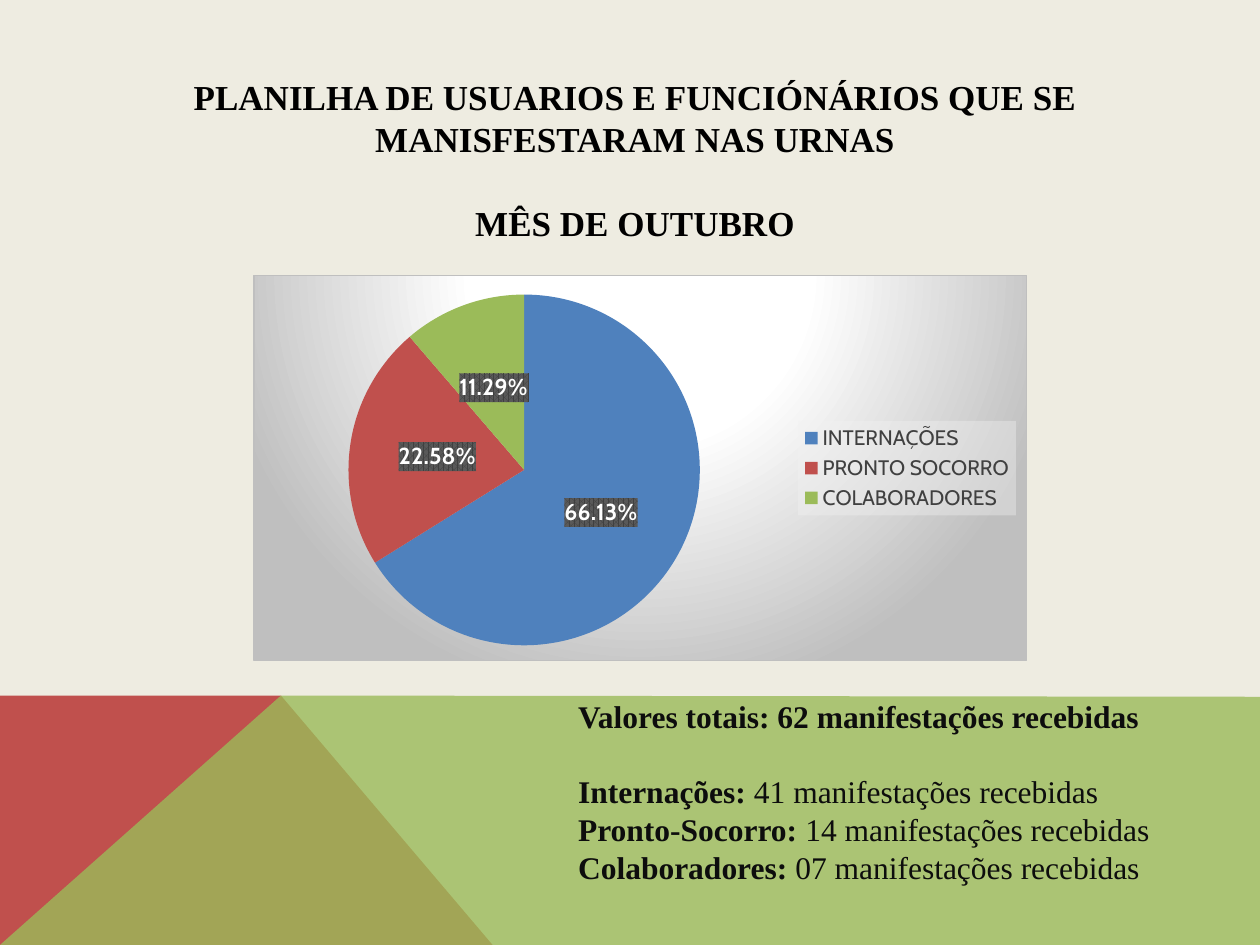
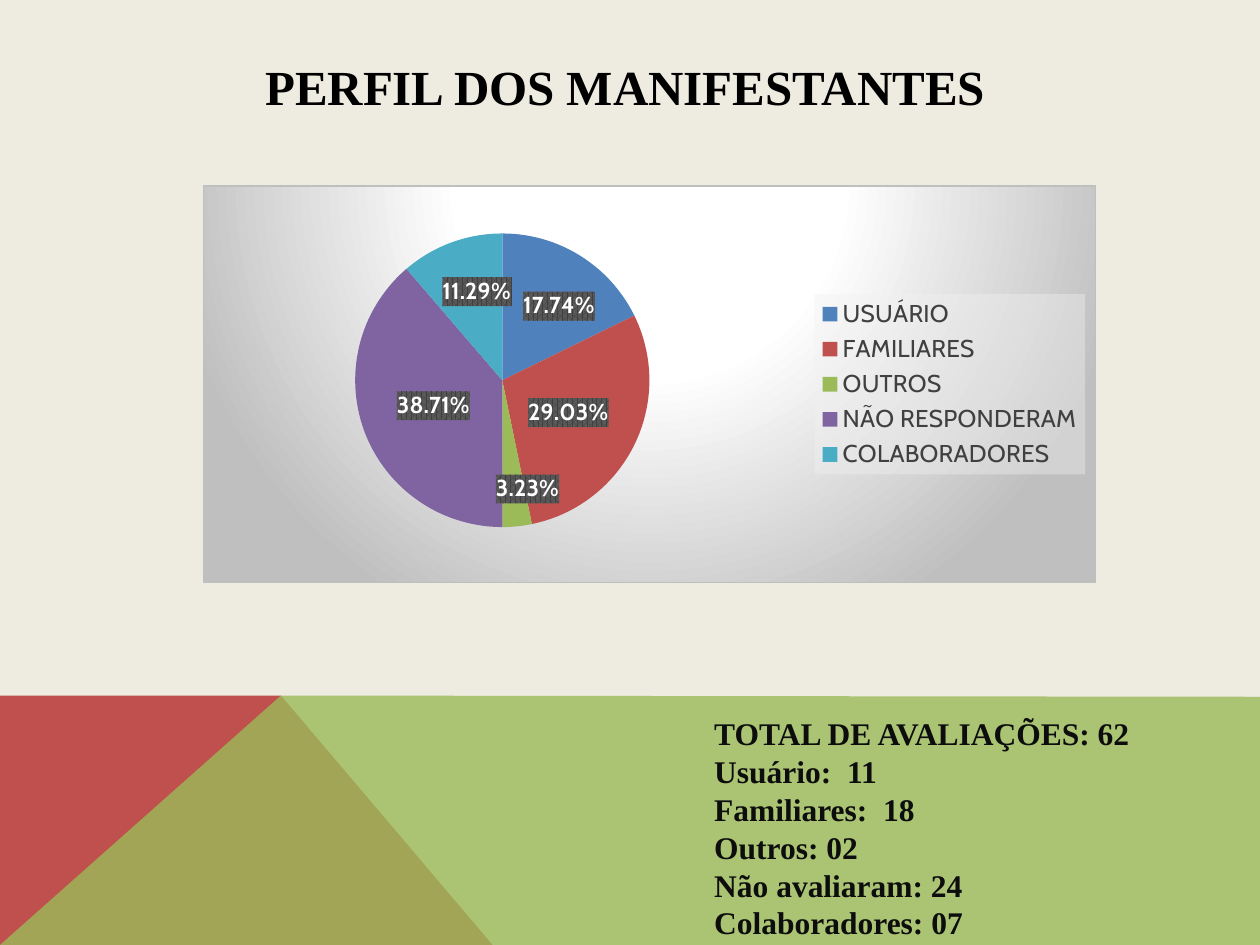
from lxml import etree
from pptx import Presentation
from pptx.chart.data import CategoryChartData
from pptx.dml.color import RGBColor
from pptx.enum import chart as ch, text
from pptx.oxml import parse_xml
from pptx.oxml.ns import nsdecls, qn
from pptx.util import Inches, Pt

CREAM = RGBColor(0xEE, 0xEC, 0xE1)
BLUE = RGBColor(0x4F, 0x81, 0xBD)
RED = RGBColor(0xC0, 0x50, 0x4D)
GREEN = RGBColor(0x9B, 0xBB, 0x59)
PURPLE = RGBColor(0x80, 0x64, 0xA2)
TEAL = RGBColor(0x4B, 0xAC, 0xC6)
BLACK = RGBColor(0, 0, 0)
INK = RGBColor(0x0D, 0x0D, 0x0D)
GREY = RGBColor(0x40, 0x40, 0x40)
WHITE = RGBColor(0xFF, 0xFF, 0xFF)
SLICES = (BLUE, RED, GREEN, PURPLE, TEAL)
SERIF, SANS = "Times New Roman", "Cabin"
LEFT, CENTER, JUSTIFY = (text.PP_ALIGN.LEFT, text.PP_ALIGN.CENTER,
                         text.PP_ALIGN.JUSTIFY)
MIDDLE = ch.XL_LABEL_POSITION.CENTER
PERCENT = "0.00%"

PANEL = """<a:gradFill><a:gsLst>
<a:gs pos="0"><a:srgbClr val="FFFFFF"/></a:gs>
<a:gs pos="39000"><a:srgbClr val="FFFFFF"/></a:gs>
<a:gs pos="100000"><a:srgbClr val="BFBFBF"/></a:gs></a:gsLst>
<a:path path="circle">
<a:fillToRect l="50000" t="-80000" r="50000" b="180000"/></a:path></a:gradFill>
<a:ln w="9525"><a:solidFill><a:srgbClr val="BFBFBF"/></a:solidFill></a:ln>"""
HATCH = """<a:pattFill prst="pct75"><a:fgClr><a:srgbClr val="404040"/></a:fgClr>
<a:bgClr><a:srgbClr val="595959"/></a:bgClr></a:pattFill>"""
VEIL = """<a:solidFill><a:srgbClr val="F2F2F2"><a:alpha val="39000"/>
</a:srgbClr></a:solidFill>"""


def style(font, name, size, color, bold=False):
    font.name, font.size, font.bold = name, Pt(size), bold
    font.color.rgb = color


def paint(node, look):
    """Give a chart part its fill and line, just ahead of its text style."""
    node.find(qn("c:txPr")).addprevious(
        parse_xml(f'<c:spPr {nsdecls("c", "a")}>{look}</c:spPr>'))


def layout(**values):
    """Make a manual chart layout from its settings, in schema order."""
    items = "".join(f'<c:{k} val="{v}"/>' for k, v in values.items())
    return parse_xml(f'<c:layout {nsdecls("c")}><c:manualLayout>{items}'
                     '</c:manualLayout></c:layout>')


def nudge(point, x, y):
    """Shift one percentage label by fractions of the chart."""
    label = point.data_label
    style(label.font, SANS, 13.3, WHITE, bold=True)
    label.position = MIDDLE
    node = label._dLbl
    node.find(qn("c:showVal")).set("val", "0")
    node.find(qn("c:showPercent")).set("val", "1")
    form = parse_xml(f'<c:numFmt {nsdecls("c")} formatCode="{PERCENT}" '
                     'sourceLinked="0"/>')
    spot = node.find(qn("c:idx"))
    spot.addnext(form)
    spot.addnext(layout(x=x, y=y))
    paint(node, HATCH)


class Deck:
    def __init__(self):
        self.prs = Presentation()
        self.prs.slide_width, self.prs.slide_height = Inches(10), Inches(7.5)
        fill = self.prs.slide_master.background.fill
        fill.solid()
        fill.fore_color.rgb = CREAM

    def slide(self):
        """Start a slide with the coloured band at its foot."""
        self.page = self.prs.slides.add_slide(self.prs.slide_layouts[6])
        self.shape([(0, 7.5), (0, 5.52), (2.23, 5.52), (3.91, 7.5)], RED)
        self.shape([(0, 7.5), (2.23, 5.52), (10, 5.53), (10, 7.5)], GREEN, 80)

    def shape(self, points, color, alpha=100):
        first, *rest = [(Inches(x), Inches(y)) for x, y in points]
        pen = self.page.shapes.build_freeform(*first)
        pen.add_line_segments(rest, close=True)
        form = pen.convert_to_shape()
        form.shadow.inherit = False
        form.line.fill.background()
        form.fill.solid()
        form.fill.fore_color.rgb = color
        if alpha < 100:
            tint = form.fill._xPr.find(".//" + qn("a:srgbClr"))
            etree.SubElement(tint, qn("a:alpha"), val=str(alpha * 1000))

    def text(self, box, lines, size, color, align, gap=None):
        """Write lines of (bold, plain) parts; gap is (line index, points)."""
        frame = self.page.shapes.add_textbox(*map(Inches, box)).text_frame
        frame.word_wrap = True
        for i, parts in enumerate(lines):
            para = frame.paragraphs[0] if i == 0 else frame.add_paragraph()
            para.alignment = align
            if gap and gap[0] == i:
                para.space_before = Pt(gap[1])
            for j, part in enumerate(parts):
                run = para.add_run()
                run.text = part
                style(run.font, SERIF, size, color, bold=j == 0)

    def pie(self, box, plot, shares, size, shifts=()):
        """Draw a pie; plot is its place as fractions of the chart.

        shifts holds (slice index, x, y) for labels moved off centre.
        """
        data = CategoryChartData()
        data.categories = list(shares)
        data.add_series("Series 1", list(shares.values()))
        chart = self.page.shapes.add_chart(
            ch.XL_CHART_TYPE.PIE, *map(Inches, box), data).chart
        chart.has_title = False
        style(chart.font, SANS, 10, BLACK)
        paint(chart._chartSpace, PANEL)
        chart.has_legend = True
        legend = chart.legend
        legend.position = ch.XL_LEGEND_POSITION.RIGHT
        legend.include_in_layout = False
        style(legend.font, SANS, size, GREY)
        paint(legend._element, VEIL)
        chart.plots[0].vary_by_categories = True
        series = chart.plots[0].series[0]
        for i, color in enumerate(SLICES[:len(shares)]):
            fill = series.points[i].format.fill
            fill.solid()
            fill.fore_color.rgb = color
        labels = series.data_labels
        labels.show_percentage, labels.show_value = True, False
        labels.number_format = PERCENT
        labels.number_format_is_linked = False
        labels.position = MIDDLE
        style(labels.font, SANS, 13.3, WHITE, bold=True)
        paint(labels._element, HATCH)
        for i, x, y in shifts:
            nudge(series.points[i], x, y)
        self.place(chart, plot)

    def place(self, chart, plot):
        area = chart._chartSpace.find(".//" + qn("c:plotArea"))
        for old in area.findall(qn("c:layout")):
            area.remove(old)
        area.insert(0, layout(layoutTarget="inner", xMode="edge",
                              yMode="edge", **dict(zip("xywh", plot))))


def main():
    deck = Deck()

    deck.slide()
    deck.text((0.39, 0.55, 9.3, 1.78), [
        ("PLANILHA DE USUARIOS E FUNCIÓNÁRIOS QUE SE MANISFESTARAM NAS URNAS",),
        ("MÊS DE OUTUBRO",)], 20, BLACK, CENTER, gap=(1, 24))
    deck.text((4.49, 5.48, 5.47, 1.62), [
        ("Valores totais: 62 manifestações recebidas",),
        ("Internações: ", "41 manifestações recebidas"),
        ("Pronto-Socorro:", " 14 manifestações recebidas"),
        ("Colaboradores: ", "07 manifestações recebidas")],
        18, INK, JUSTIFY, gap=(1, 21.5))
    deck.pie((2.01, 2.18, 6.14, 3.07), (0.12, 0.05, 0.46, 0.91), {
        "INTERNAÇÕES": 66.13, "PRONTO SOCORRO": 22.58,
        "COLABORADORES": 11.29}, 12)

    deck.slide()
    deck.text((0.85, 0.4, 8.22, 0.6), [("PERFIL DOS MANIFESTANTES",)],
              28, BLACK, CENTER)
    deck.text((5.57, 5.62, 3.98, 2.52), [
        ("TOTAL DE AVALIAÇÕES: 62",), ("Usuário:  11",),
        ("Familiares:  18",), ("Outros: 02",), ("Não avaliaram: 24",),
        ("Colaboradores: 07",)], 18, INK, LEFT)
    deck.pie((1.61, 1.47, 7.09, 3.16), (0.17, 0.12, 0.33, 0.74), {
        "USUÁRIO": 17.74, "FAMILIARES": 29.03, "OUTROS": 3.23,
        "NÃO RESPONDERAM": 38.71, "COLABORADORES": 11.29}, 14,
        [(0, 0.02, -0.03), (2, 0.02, 0.09), (4, 0, -0.05)])

    deck.prs.save("out.pptx")


if __name__ == "__main__":
    main()
